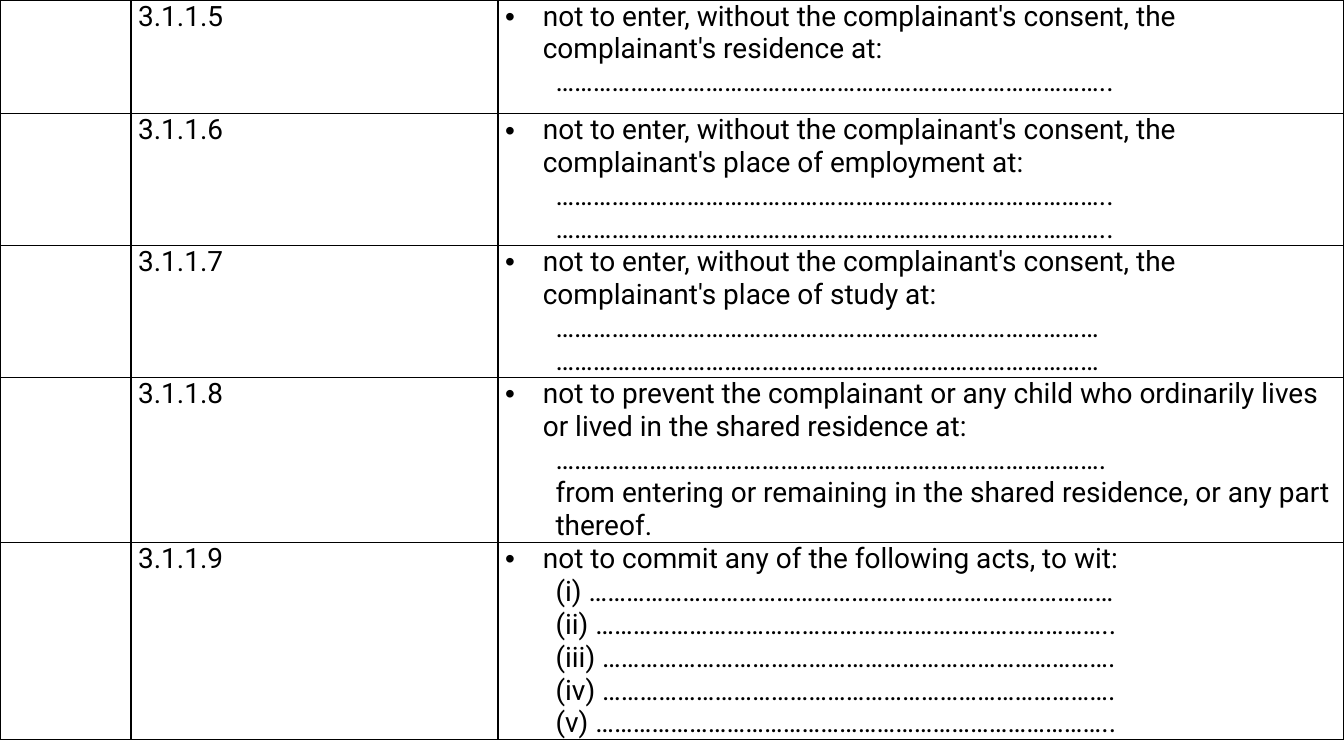
from lxml.etree import SubElement
from pptx import Presentation
from pptx.dml.color import RGBColor as RGB
from pptx.oxml.ns import qn
from pptx.util import Cm, Pt

COLORS = {"text": "000000", "border": "000000"}
FONT = "Roboto"
DOTS = "…" * 29
SHORT_DOTS = "…" * 27
CLAUSES = [
    ("3.1.1.5", "not to enter, without the complainant's consent, the complainant's residence at:",
     [DOTS + ".."]),
    ("3.1.1.6", "not to enter, without the complainant's consent, the complainant's place of employment at:",
     [DOTS + ".."] * 2),
    ("3.1.1.7", "not to enter, without the complainant's consent, the complainant's place of study at:",
     [DOTS] * 2),
    ("3.1.1.8", "not to prevent the complainant or any child who ordinarily lives or lived in the shared residence at:",
     [DOTS + ".", "from entering or remaining in the shared residence, or any part thereof."]),
    ("3.1.1.9", "not to commit any of the following acts, to wit:",
     ["(i) " + SHORT_DOTS + "…", "(ii) " + SHORT_DOTS + "..", "(iii) " + SHORT_DOTS + ".",
      "(iv) " + SHORT_DOTS + ".", "(v) " + SHORT_DOTS + ".."]),
]
COL_WIDTHS = [Cm(3.3), Cm(9.25), Cm(21.31)]
ROW_HEIGHTS = [Cm(2.87), Cm(3.3), Cm(3.3), Cm(4.14), Cm(4.98)]


def write(p, text, size=20, color="text", left=0, hanging=0, bullet=None):
    """Fill a paragraph with text, its indent and an optional bullet."""
    r = p.add_run()
    r.text = text
    r.font.name, r.font.size = FONT, Pt(size)
    r.font.color.rgb = RGB.from_string(COLORS[color])
    pPr = p._p.get_or_add_pPr()
    pPr.set("marL", str(Cm(left)))
    pPr.set("indent", str(-Cm(hanging)))
    if bullet:
        SubElement(pPr, qn("a:buFont")).set("typeface", "Arial")
        SubElement(pPr, qn("a:buChar")).set("char", bullet)
    else:
        SubElement(pPr, qn("a:buNone"))


def style_cell(cell):
    """Give a cell its margins, clear fill and four thin borders."""
    cell.margin_left = cell.margin_right = Cm(0.18)
    cell.margin_top = cell.margin_bottom = 0
    tcPr = cell._tc.get_or_add_tcPr()
    for side in ("lnL", "lnR", "lnT", "lnB"):
        ln = SubElement(tcPr, qn("a:" + side))
        ln.set("w", str(Pt(1)))
        fill = SubElement(ln, qn("a:solidFill"))
        SubElement(fill, qn("a:srgbClr")).set("val", COLORS["border"])
    SubElement(tcPr, qn("a:noFill"))


def main():
    """Build the slide with the table of clauses."""
    prs = Presentation()
    prs.slide_width, prs.slide_height = Cm(33.87), Cm(19.05)
    s = prs.slides.add_slide(prs.slide_layouts[6])
    table = s.shapes.add_table(len(CLAUSES), len(COL_WIDTHS), 0, 0,
                               sum(COL_WIDTHS), sum(ROW_HEIGHTS)).table
    table.first_row = table.horz_banding = False
    for col, width in zip(table.columns, COL_WIDTHS):
        col.width = width
    for row, height, (number, clause, lines) in zip(table.rows, ROW_HEIGHTS, CLAUSES):
        row.height = height
        for cell in row.cells:
            style_cell(cell)
        write(row.cells[1].text_frame.paragraphs[0], number)
        tf = row.cells[2].text_frame
        write(tf.paragraphs[0], clause, left=0.95, hanging=0.95, bullet="•")
        for line in lines:
            write(tf.add_paragraph(), line, left=1.27)
    prs.save("out.pptx")


if __name__ == "__main__":
    main()
